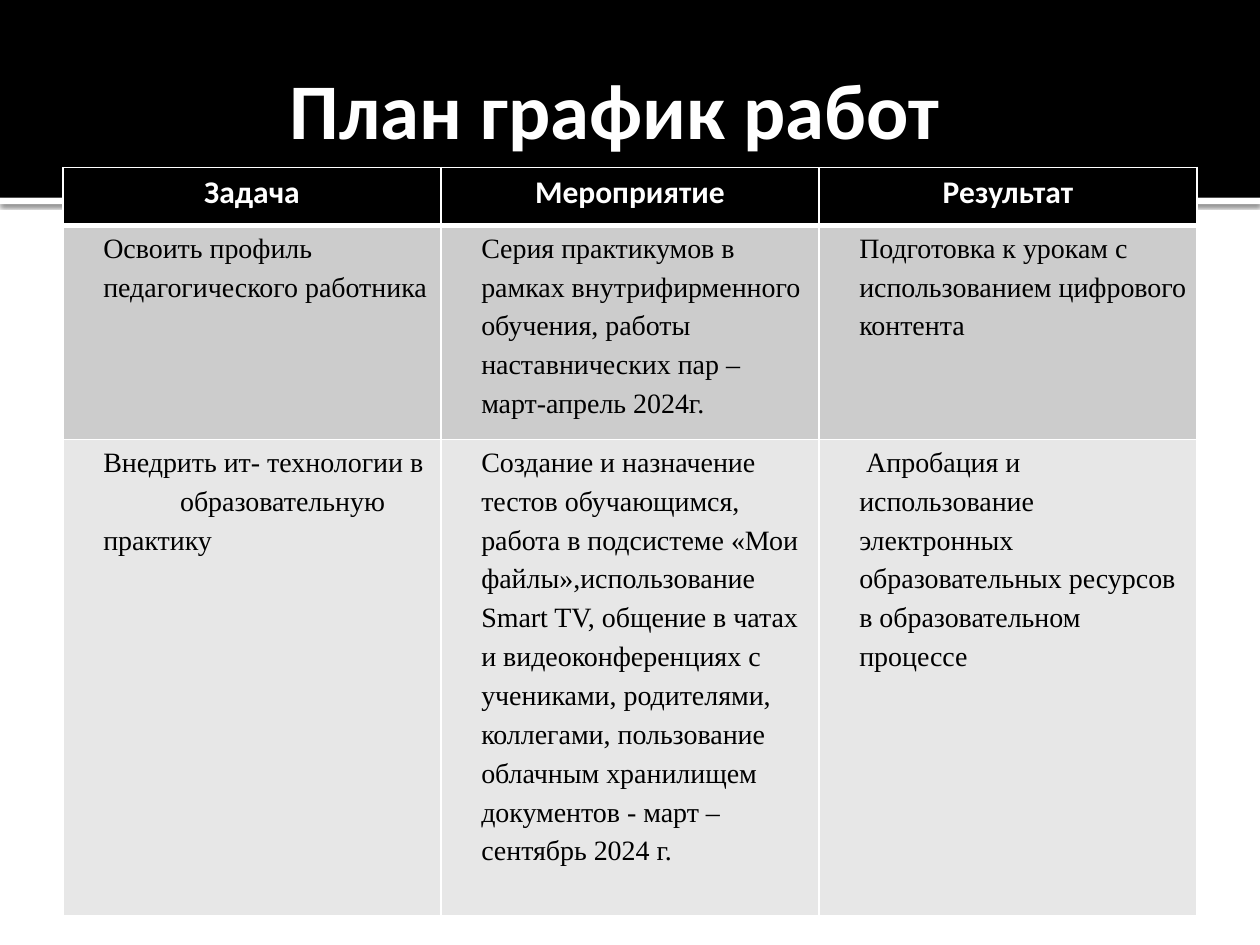
from lxml.etree import SubElement
from pptx import Presentation
from pptx.dml.color import RGBColor
from pptx.enum.shapes import MSO_SHAPE
from pptx.enum.text import MSO_ANCHOR, PP_ALIGN
from pptx.oxml import parse_xml
from pptx.oxml.ns import nsdecls, qn
from pptx.util import Inches, Pt

BLACK = RGBColor(0x00, 0x00, 0x00)
WHITE = RGBColor(0xFF, 0xFF, 0xFF)
DARK_BAND = RGBColor(0xCC, 0xCC, 0xCC)
LIGHT_BAND = RGBColor(0xE7, 0xE7, 0xE7)

TITLE = "План график работ"
HEADINGS = ["Задача", "Мероприятие", "Результат"]
TASKS = [
    ["Освоить профиль педагогического работника",
     "Серия практикумов в рамках внутрифирменного обучения, работы "
     "наставнических пар – март-апрель 2024г.",
     "Подготовка к урокам с использованием цифрового контента"],
    ["Внедрить ит- технологии в\nобразовательную практику",
     "Создание и назначение тестов обучающимся, работа в подсистеме «Мои "
     "файлы»,использование Smart TV, общение в чатах и видеоконференциях с "
     "учениками, родителями, коллегами, пользование облачным хранилищем "
     "документов - март –сентябрь 2024 г.",
     " Апробация и использование электронных образовательных ресурсов "
     "в образовательном процессе"],
]
BAND_FILLS = [DARK_BAND, LIGHT_BAND]
ROW_HEIGHTS = [0.46, 1.7, 3.78]

SLIDE_W, SLIDE_H = 10, 7.5
MARGIN = SLIDE_W / 20
CONTENT_W = SLIDE_W - 2 * MARGIN
HEADER_H = 1.57
TABLE_TOP = 1.33
TEXT_INDENT = 0.25
CONTINUATION_INDENT = 0.61


def add_bar(slide, top, height, color):
    bar = slide.shapes.add_shape(MSO_SHAPE.RECTANGLE, 0, Inches(top),
                                 Inches(SLIDE_W), Inches(height))
    bar.shadow.inherit = False
    bar.fill.solid()
    bar.fill.fore_color.rgb = color
    bar.line.fill.background()
    return bar


def add_drop_shadow(bar):
    effects = bar._element.spPr.find(qn("a:effectLst"))
    effects.append(parse_xml(
        f'<a:outerShdw {nsdecls("a")} blurRad="{Pt(2.5)}" dist="{Pt(0.8)}" '
        'dir="5400000" algn="tl" rotWithShape="0"><a:srgbClr val="000000">'
        '<a:alpha val="60000"/></a:srgbClr></a:outerShdw>'))


def style_text(paragraph, font_name, size, color, bold):
    for run in paragraph.runs:
        run.font.name = font_name
        run.font.size = Pt(size)
        run.font.color.rgb = color
        run.font.bold = bold


def set_borders(cell, top, bottom):
    """White lines on all four sides; top and bottom widths in points."""
    properties = cell._tc.get_or_add_tcPr()
    widths = {"lnL": 1, "lnR": 1, "lnT": top, "lnB": bottom}
    for position, (side, width) in enumerate(widths.items()):
        line = SubElement(properties, qn(f"a:{side}"), w=str(Pt(width)))
        fill = SubElement(line, qn("a:solidFill"))
        SubElement(fill, qn("a:srgbClr"), val=str(WHITE))
        properties.insert(position, line)


def fill_heading(cell, heading):
    cell.text_frame.text = heading
    paragraph = cell.text_frame.paragraphs[0]
    paragraph.alignment = PP_ALIGN.CENTER
    style_text(paragraph, "Calibri", 18, WHITE, True)


def fill_task(cell, content):
    cell.margin_left = cell.margin_right = Inches(0.07)
    cell.margin_top = cell.margin_bottom = 0
    cell.text_frame.text = content
    for number, paragraph in enumerate(cell.text_frame.paragraphs):
        paragraph.alignment = PP_ALIGN.LEFT
        paragraph.line_spacing = 1.25
        properties = paragraph._p.get_or_add_pPr()
        properties.set("marL", str(Inches(TEXT_INDENT)))
        properties.set("indent", str(Inches(CONTINUATION_INDENT if number else 0)))
        style_text(paragraph, "Times New Roman", 16, BLACK, False)


def add_title(slide):
    title = slide.shapes.add_textbox(Inches(MARGIN), Inches(0.17),
                                     Inches(CONTENT_W), Inches(1.37))
    frame = title.text_frame
    frame.word_wrap = True
    frame.vertical_anchor = MSO_ANCHOR.MIDDLE
    frame.margin_right = Inches(0.34)
    frame.text = TITLE
    frame.paragraphs[0].alignment = PP_ALIGN.CENTER
    style_text(frame.paragraphs[0], "Calibri", 45, WHITE, True)


def add_plan(slide):
    rows = [HEADINGS] + TASKS
    plan = slide.shapes.add_table(
        len(rows), len(HEADINGS), Inches(MARGIN), Inches(TABLE_TOP),
        Inches(CONTENT_W), Inches(sum(ROW_HEIGHTS))).table
    for column in plan.columns:
        column.width = Inches(CONTENT_W / len(HEADINGS))
    for r, (contents, color) in enumerate(zip(rows, [BLACK] + BAND_FILLS)):
        plan.rows[r].height = Inches(ROW_HEIGHTS[r])
        for c, content in enumerate(contents):
            cell = plan.cell(r, c)
            cell.fill.solid()
            cell.fill.fore_color.rgb = color
            set_borders(cell, top=3 if r == 1 else 1, bottom=3 if r == 0 else 1)
            if r == 0:
                fill_heading(cell, content)
            else:
                fill_task(cell, content)


def main():
    deck = Presentation()
    deck.slide_width, deck.slide_height = Inches(SLIDE_W), Inches(SLIDE_H)
    slide = deck.slides.add_slide(deck.slide_layouts[6])
    add_drop_shadow(add_bar(slide, HEADER_H, 0.05, WHITE))
    add_bar(slide, 0, HEADER_H, BLACK)
    add_title(slide)
    add_plan(slide)
    deck.save("out.pptx")


if __name__ == "__main__":
    main()
